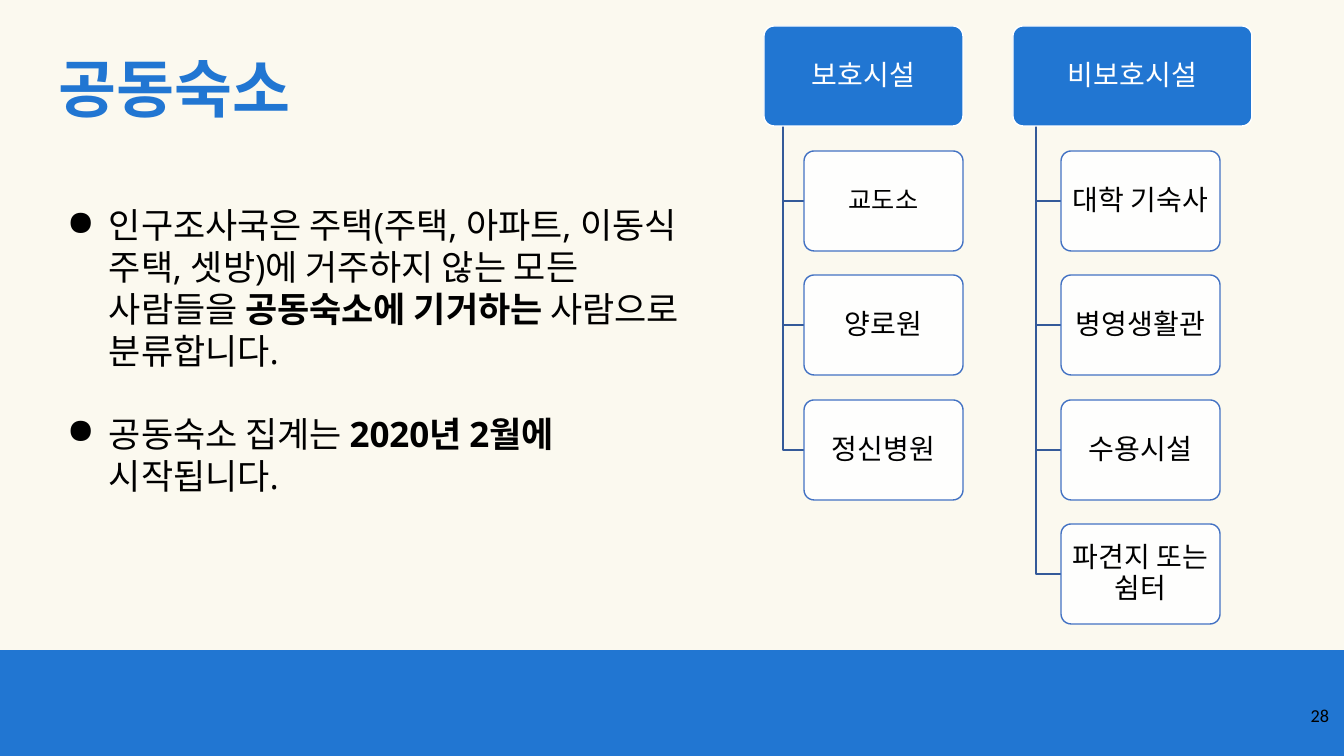
"""Build the group quarters slide with two facility hierarchies."""
from lxml import etree
from pptx import Presentation
from pptx.dml.color import RGBColor
from pptx.enum.shapes import MSO_SHAPE as SHAPE
from pptx.enum.text import MSO_ANCHOR as ANCHOR, PP_ALIGN as ALIGN
from pptx.oxml.ns import qn
from pptx.util import Emu, Pt

PX = 914400 / 100.8
BLUE, WHITE, BLACK = "2176D2", "FFFFFF", "000000"
HEADER_TOP, HEADER_HEIGHT = 26, 100
CARD_TOP, CARD_WIDTH, CARD_HEIGHT = 151, 159, 100
TWO_CARD_PITCH = 249


def px(*lengths):
    return [Emu(round(length * PX)) for length in lengths]


def add_run(paragraph, text, size, font, color, bold=False):
    run = paragraph.add_run()
    run.text = text
    run.font.size = Pt(size)
    run.font.name = font
    run.font.bold = bold
    run.font.color.rgb = RGBColor.from_string(color)


presentation = Presentation()
presentation.slide_width, presentation.slide_height = px(1344, 756)
slide = presentation.slides.add_slide(presentation.slide_layouts[6])
slide.background.fill.solid()
slide.background.fill.fore_color.rgb = RGBColor.from_string("FBF9EF")

footer = slide.shapes.add_shape(SHAPE.RECTANGLE, *px(0, 650, 1344, 106))
footer.shadow.inherit = False
footer.fill.solid()
footer.fill.fore_color.rgb = RGBColor.from_string(BLUE)
footer.line.fill.background()

title = slide.shapes.add_textbox(*px(49, 45, 1038, 87))
title.text_frame.word_wrap = True
add_run(title.text_frame.paragraphs[0], "공동숙소", 45, "Montserrat", BLUE, True)

hierarchies = [
    (764, 199, "보호시설", [
        ("교도소", 18, "Open Sans"),
        ("양로원", 20, "Calibri"),
        ("정신병원", 20, "Calibri"),
    ]),
    (1013, 239, "비보호시설", [
        ("대학 기숙사", 20, "Calibri"),
        ("병영생활관", 20, "Calibri"),
        ("수용시설", 20, "Calibri"),
        ("파견지 또는 쉼터", 20, "Calibri"),
    ]),
]
boxes = []
for left, width, heading, facilities in hierarchies:
    boxes.append((left, HEADER_TOP, width, HEADER_HEIGHT, heading, 20, "Open Sans", True))
    trunk_x, card_left = left + width // 10, left + width // 5 + 1
    for index, (facility, size, font) in enumerate(facilities):
        top = CARD_TOP + index * TWO_CARD_PITCH // 2
        middle = top + CARD_HEIGHT // 2
        builder = slide.shapes.build_freeform(trunk_x, HEADER_TOP + HEADER_HEIGHT, scale=PX)
        builder.add_line_segments([(trunk_x, middle), (card_left, middle)], close=False)
        branch = builder.convert_to_shape()
        branch.shadow.inherit = False
        branch.fill.background()
        branch.line.color.rgb = RGBColor.from_string("345A99")
        branch.line.width = Pt(1)
        boxes.append((card_left, top, CARD_WIDTH, CARD_HEIGHT, facility, size, font, False))

for left, top, width, height, label, size, font, is_header in boxes:
    box = slide.shapes.add_shape(SHAPE.ROUNDED_RECTANGLE, *px(left, top, width, height))
    box.adjustments[0] = 0.1
    box.shadow.inherit = False
    box.fill.solid()
    box.fill.fore_color.rgb = RGBColor.from_string(BLUE if is_header else WHITE)
    if not is_header:
        color = box.fill._xPr.find(qn("a:solidFill"))[0]
        etree.SubElement(color, qn("a:alpha"), val="89000")
    box.line.color.rgb = RGBColor.from_string(WHITE if is_header else "4372C3")
    box.line.width = Pt(1)
    frame = box.text_frame
    frame.word_wrap = True
    frame.vertical_anchor = ANCHOR.MIDDLE
    frame.margin_left, frame.margin_right, frame.margin_top, frame.margin_bottom = px(4, 4, 3, 3)
    paragraph = frame.paragraphs[0]
    paragraph.alignment = ALIGN.CENTER
    paragraph.line_spacing = 0.9
    add_run(paragraph, label, size, font, WHITE if is_header else BLACK)

bullets = [
    [("인구조사국은 주택(주택, 아파트, 이동식 주택, 셋방)에 거주하지 않는 모든 사람들을 ", False),
     ("공동숙소에 기거하는", True), (" 사람으로 분류합니다.", False)],
    [("공동숙소 집계는 ", False), ("2020년 2월에", True), (" 시작됩니다.", False)],
]
body = slide.shapes.add_textbox(*px(49, 199, 675, 432))
body.text_frame.word_wrap = True
for index, runs in enumerate(bullets):
    paragraph = body.text_frame.paragraphs[0] if index == 0 else body.text_frame.add_paragraph()
    properties = paragraph._p.get_or_add_pPr()
    indent, hanging = px(50, -42)
    properties.set("marL", str(indent))
    properties.set("indent", str(hanging))
    bullet_color = etree.SubElement(properties, qn("a:buClr"))
    etree.SubElement(bullet_color, qn("a:srgbClr"), val=BLACK)
    etree.SubElement(properties, qn("a:buChar"), char="●")
    if index:
        paragraph.space_before = Pt(29)
    for text, bold in runs:
        add_run(paragraph, text, 25, "Open Sans", BLACK, bold)

page_number = slide.shapes.add_textbox(*px(1258, 699, 81, 57))
page_number.text_frame.word_wrap = True
paragraph = page_number.text_frame.paragraphs[0]
paragraph.alignment = ALIGN.RIGHT
add_run(paragraph, "28", 13, "Calibri", BLACK)

presentation.save("out.pptx")
